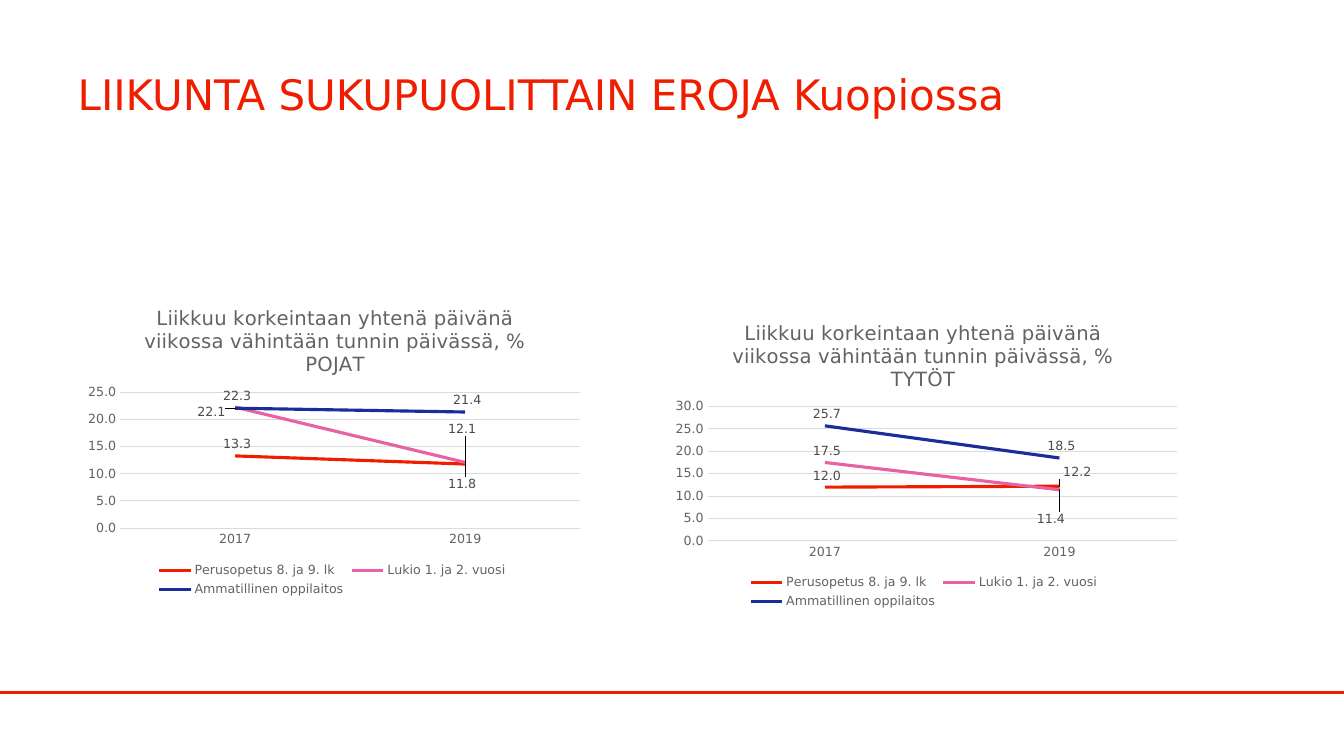
from lxml.etree import SubElement
from pptx import Presentation
from pptx.chart.data import CategoryChartData
from pptx.dml.color import RGBColor
from pptx.enum.chart import XL_CHART_TYPE as ChartType, XL_LABEL_POSITION as LabelPos
from pptx.enum.chart import XL_LEGEND_POSITION as LegendPos, XL_TICK_MARK as Tick
from pptx.enum.shapes import MSO_CONNECTOR as Connector
from pptx.enum.text import MSO_ANCHOR as Anchor, MSO_AUTO_SIZE as AutoSize, PP_ALIGN as Align
from pptx.oxml import parse_xml
from pptx.oxml.ns import nsdecls, qn
from pptx.util import Pt

RED, PINK, BLUE = "F01E00", "E961A5", "192D9B"
GREY, LABEL_GREY, GRID_GREY = "636363", "4B4B4B", "DBDBDB"
NUMBER_FORMAT = r"#\ ##0.0"
SCHOOLS = {"Perusopetus 8. ja 9. lk": RED, "Lukio 1. ja 2. vuosi": PINK,
           "Ammatillinen oppilaitos": BLUE}
QUESTION = "Liikkuu korkeintaan yhtenä päivänä viikossa vähintään tunnin päivässä, % "
GENDERS = [
    dict(name="POJAT", box=(52.56, 203.76, 369.36, 225.36), top=25,
         shares=[(13.3, 11.8), (22.3, 12.1), (22.1, 21.4)],
         moved={(0, 1): (-0.01, 0.1), (1, 1): (-0.01, -0.07), (2, 0): (-0.05, 0.05)}),
    dict(name="TYTÖT", box=(471.6, 214.56, 376.56, 223.2), top=30,
         shares=[(12, 12.2), (17.5, 11.4), (25.7, 18.5)],
         moved={(0, 1): (0.03, -0.01), (1, 1): (-0.02, 0.13)}),
]


def rgb(code):
    return RGBColor.from_string(code)


def manual_layout(**values):
    layout = parse_xml(f"<c:layout {nsdecls('c')}><c:manualLayout/></c:layout>")
    for key, value in values.items():
        SubElement(layout[0], qn(f"c:{key}")).set("val", str(value))
    return layout


class Slide:
    """Holds the type style and the slide being built."""

    face = "DejaVu Sans"

    def __init__(self, deck):
        self.page = deck.slides.add_slide(deck.slide_layouts[5])

    def style(self, font, size, color):
        for key, value in dict(name=self.face, size=Pt(size), bold=False).items():
            setattr(font, key, value)
        font.color.rgb = rgb(color)

    def stroke(self, line, color, width):
        line.color.rgb = rgb(color)
        line.width = Pt(width)

    def title(self, text, box):
        heading = self.page.shapes.title
        for side, value in zip(("left", "top", "width", "height"), box):
            setattr(heading, side, Pt(value))
        frame = heading.text_frame
        for key, value in dict(text=text, word_wrap=True, auto_size=AutoSize.NONE,
                               vertical_anchor=Anchor.MIDDLE).items():
            setattr(frame, key, value)
        frame.paragraphs[0].alignment = Align.LEFT
        self.style(frame.paragraphs[0].runs[0].font, 30, RED)

    def rule(self, x1, y1, x2, y2):
        footer = self.page.shapes.add_connector(
            Connector.STRAIGHT, *map(Pt, (x1, y1, x2, y2)))
        self.stroke(footer.line, RED, 2)
        SubElement(footer.element.spPr, qn("a:effectLst"))

    def line_chart(self, name, box, top, shares, moved):
        data = CategoryChartData(number_format=NUMBER_FORMAT)
        data.categories = ["2017", "2019"]
        for school, values in zip(SCHOOLS, shares):
            data.add_series(school, values)
        chart = self.page.shapes.add_chart(ChartType.LINE, *map(Pt, box), data).chart
        self.style(chart.font, 10, "0F0F0F")
        self.chart_title(chart, QUESTION + name)
        self.axes(chart, top)
        chart.has_legend = True
        chart.legend.position = LegendPos.BOTTOM
        chart.legend.include_in_layout = False
        self.style(chart.legend.font, 9, GREY)
        plot = chart.plots[0]
        plot.vary_by_categories = False
        for index, (series, color) in enumerate(zip(plot.series, SCHOOLS.values())):
            series.smooth = False
            self.stroke(series.format.line, color, 2.25)
            self.labels(series.data_labels)
            for (owner, point), shift in moved.items():
                if owner == index:
                    self.move_label(series, point, *shift)

    def chart_title(self, chart, text):
        frame = chart.chart_title.text_frame
        frame.text = text
        self.style(frame.paragraphs[0].runs[0].font, 14, GREY)
        heading = chart.chart_title._element
        for old in heading.findall(qn("c:layout")):
            heading.remove(old)
        heading.find(qn("c:tx")).addnext(
            manual_layout(xMode="edge", yMode="edge", x=0.13, y=0.05))

    def axes(self, chart, top):
        categories, values = chart.category_axis, chart.value_axis
        for axis in (categories, values):
            axis.major_tick_mark = axis.minor_tick_mark = Tick.NONE
            self.style(axis.tick_labels.font, 9, GREY)
        self.stroke(categories.format.line, GRID_GREY, 0.75)
        self.stroke(values.major_gridlines.format.line, GRID_GREY, 0.75)
        values.format.line.fill.background()
        for key, value in dict(minimum_scale=0, maximum_scale=top, major_unit=5).items():
            setattr(values, key, value)
        values.tick_labels.number_format = NUMBER_FORMAT
        values.tick_labels.number_format_is_linked = False
        area = chart._chartSpace.chart.plotArea
        for old in area.findall(qn("c:layout")):
            area.remove(old)
        area.insert(0, manual_layout(layoutTarget="inner", xMode="edge", yMode="edge",
                                     x=0.09, y=0.34, w=0.89, h=0.43))

    def labels(self, labels):
        for key, value in dict(show_value=True, position=LabelPos.ABOVE,
                               number_format=NUMBER_FORMAT,
                               number_format_is_linked=False).items():
            setattr(labels, key, value)
        self.style(labels.font, 9, LABEL_GREY)

    def move_label(self, series, point, x, y):
        label = series.points[point].data_label
        self.style(label.font, 9, LABEL_GREY)
        label.position = LabelPos.ABOVE
        entry = series._element.xpath(f"c:dLbls/c:dLbl[c:idx/@val='{point}']")[0]
        entry.insert(1, manual_layout(x=x, y=y))


def main():
    deck = Presentation()
    deck.slide_width, deck.slide_height = Pt(960), Pt(540)
    slide = Slide(deck)
    slide.rule(0, 494.64, 961.2, 494.64)
    slide.title("LIIKUNTA SUKUPUOLITTAIN EROJA Kuopiossa", (48.24, 21.6, 864, 90))
    for gender in GENDERS:
        slide.line_chart(**gender)
    deck.save("out.pptx")


if __name__ == "__main__":
    main()
